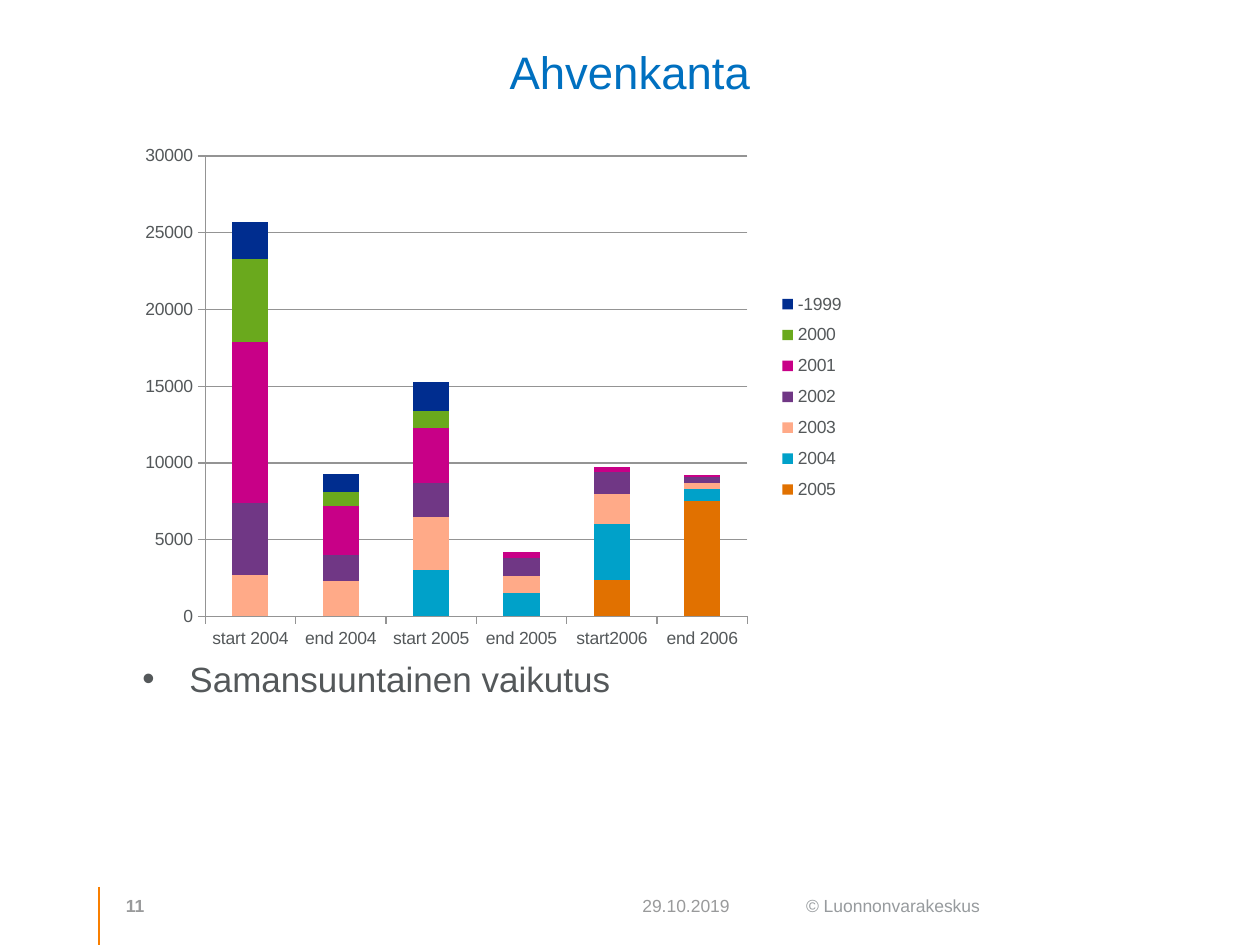
from lxml import etree
from pptx import Presentation
from pptx.chart.data import CategoryChartData as Data
from pptx.dml.color import RGBColor
from pptx.enum.chart import XL_CHART_TYPE as Kind, XL_LEGEND_POSITION as Side, XL_TICK_MARK as Tick
from pptx.enum.shapes import MSO_CONNECTOR as Link
from pptx.enum.text import MSO_ANCHOR as Anchor, PP_ALIGN as Align
from pptx.oxml import parse_xml
from pptx.oxml.ns import qn
from pptx.util import Cm, Pt


def hue(code):
    return RGBColor.from_string(code)


def write(text, box, size, color, bold=False, align=Align.LEFT, anchor=Anchor.TOP, bullet=False):
    frame = slide.shapes.add_textbox(*[Cm(v) for v in box]).text_frame
    frame.word_wrap = True
    frame.vertical_anchor = anchor
    para = frame.paragraphs[0]
    para.text = text
    para.alignment = align
    if bullet:
        props = para._p.get_or_add_pPr()
        props.set("marL", str(Cm(0.95)))
        props.set("indent", str(Cm(-0.95)))
        etree.SubElement(props, qn("a:buFont")).set("typeface", "Arial")
        etree.SubElement(props, qn("a:buChar")).set("char", "•")
    font = para.runs[0].font
    font.name = "Arial"
    font.size = Pt(size)
    font.bold = bold
    font.color.rgb = hue(color)


deck = Presentation()
deck.slide_width = Cm(25.4)
deck.slide_height = Cm(19.05)
slide = deck.slides.add_slide(deck.slide_layouts[6])

write("Ahvenkanta", (1.27, 0.76, 22.86, 3.18), 26, "0070C0", align=Align.CENTER)
write("Samansuuntainen vaikutus", (2.62, 13.13, 21.29, 3.71), 20, "54585A", bullet=True)
write("11", (2.29, 17.83, 1.24, 0.76), 10, "999A9B", bold=True, anchor=Anchor.BOTTOM)
write("29.10.2019", (12.7, 17.83, 3.12, 0.76), 10, "999A9B", anchor=Anchor.BOTTOM)
write("© Luonnonvarakeskus", (16, 17.91, 4.93, 0.69), 10, "979B9E")

rule = slide.shapes.add_connector(Link.STRAIGHT, Cm(2), Cm(17.88), Cm(2), Cm(19.05))
rule.line.color.rgb = hue("F97F00")
rule.line.width = Pt(1)
etree.SubElement(rule._element.spPr, qn("a:effectLst"))

years = [
    ("2005", "E17100", (None, None, None, None, 2400, 7500)),
    ("2004", "00A1C9", (None, None, 3000, 1500, 3600, 800)),
    ("2003", "FFAA88", (2700, 2300, 3500, 1100, 2000, 400)),
    ("2002", "703785", (4700, 1700, 2200, 1200, 1400, 400)),
    ("2001", "C80087", (10500, 3200, 3600, 400, 300, 100)),
    ("2000", "6AA91D", (5400, 900, 1100, 0, None, None)),
    ("-1999", "002D8F", (2400, 1200, 1900, 0, None, None)),
]
data = Data()
data.categories = ["start 2004", "end 2004", "start 2005", "end 2005", "start2006", "end 2006"]
for name, color, vals in years:
    data.add_series(name, vals)

chart = slide.shapes.add_chart(
    Kind.COLUMN_STACKED, Cm(2.29), Cm(2.72), Cm(15.14), Cm(10.67), data).chart
chart.has_title = False
chart.font.name = "Arial"
chart.font.size = Pt(10)
chart.font.color.rgb = hue("54585A")

plot = chart.plots[0]
plot.gap_width = 150
plot.overlap = 100
plot.vary_by_categories = False
for bar, (name, color, vals) in zip(plot.series, years):
    bar.format.fill.solid()
    bar.format.fill.fore_color.rgb = hue(color)

across, up = chart.category_axis, chart.value_axis
up.minimum_scale = 0
up.maximum_scale = 30000
up.major_unit = 5000
up.has_major_gridlines = True
for axis in (across, up):
    axis.major_tick_mark = Tick.OUTSIDE
    axis.minor_tick_mark = Tick.NONE
for part in (across, up, up.major_gridlines):
    part.format.line.color.rgb = hue("949494")
    part.format.line.width = Pt(0.75)

chart.has_legend = True
key = chart.legend
key.position = Side.RIGHT
key.include_in_layout = False

area = chart._chartSpace.chart.plotArea
for part, spot, inner, place in (
    (area, 0, '<c:layoutTarget val="inner"/>', (0.122, 0.04, 0.722, 0.87)),
    (key._element, 1, "", (0.87, 0.28, 0.12, 0.43)),
):
    for old in part.findall(qn("c:layout")):
        part.remove(old)
    modes = "".join(f'<c:{side}Mode val="edge"/>' for side in "xy")
    sizes = "".join(f'<c:{side} val="{v}"/>' for side, v in zip("xywh", place))
    part.insert(spot, parse_xml(
        '<c:layout xmlns:c="http://schemas.openxmlformats.org/drawingml/2006/chart">'
        f"<c:manualLayout>{inner}{modes}{sizes}</c:manualLayout></c:layout>"))

deck.save("out.pptx")
